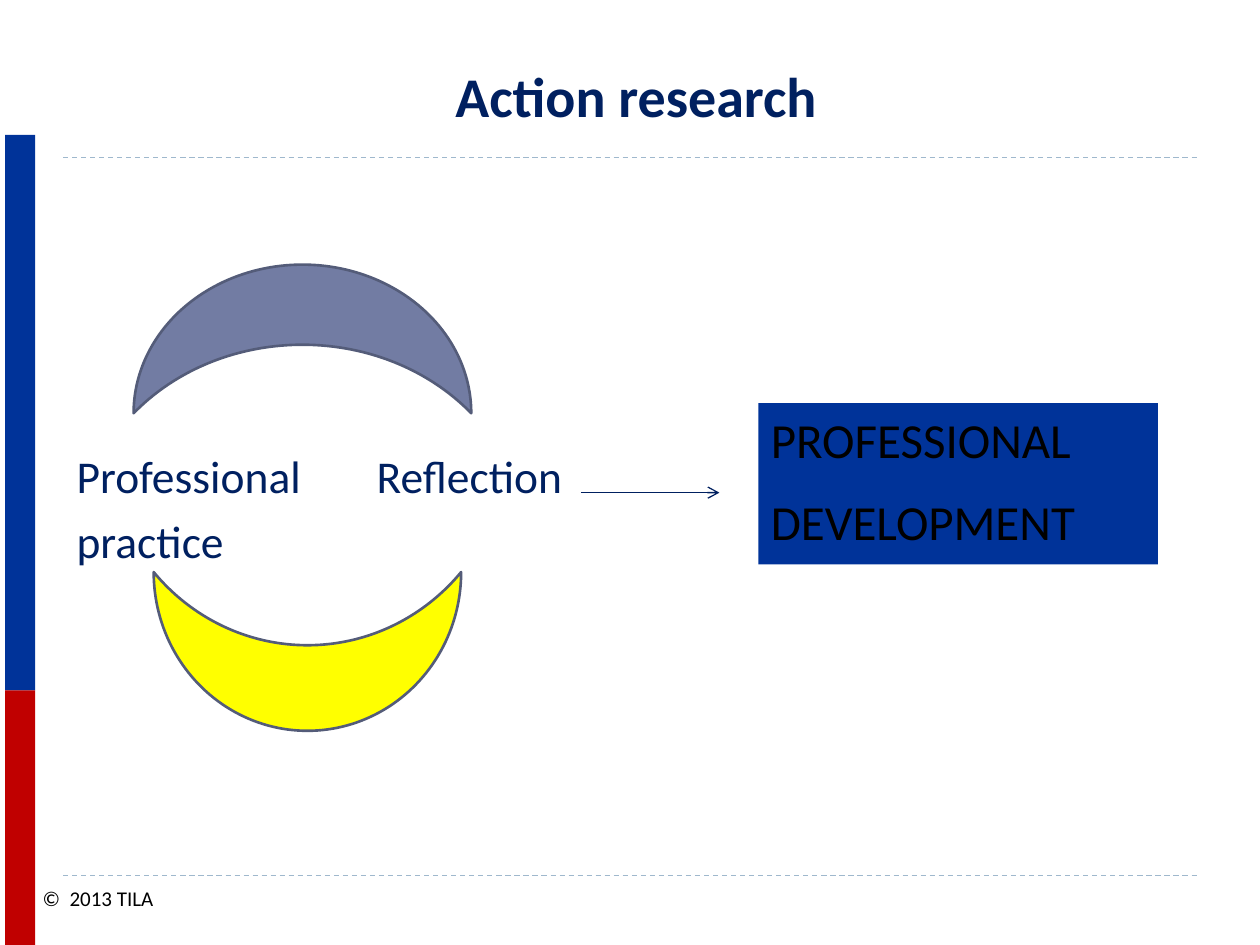
from collections import namedtuple

from lxml import etree
from pptx import Presentation
from pptx import util as u
from pptx.dml.color import RGBColor
from pptx.enum import dml, shapes, text
from pptx.oxml.ns import qn

# The page is a grid of 100 columns by 75 rows
COLUMNS, ROWS = 100, 75
CELL = u.Inches(0.1)
NAVY, BLUE, RED, YELLOW = "002060", "003399", "C00000", "FFFF00"
SLATE, SLATE_EDGE, RULE, BLACK = "727CA3", "545C79", "9FB8CD", "000000"

Box = namedtuple("Box", "left top width height")


def cells(*counts):
    return [round(count * CELL) for count in counts]


def inside(box, left, top, width, height):
    """A box given in cells from the corner of another box."""
    return Box(box.left + left, box.top + top, width, height)


def color(value):
    return RGBColor.from_string(value)


def add_block(page, kind, box, fill, edge=None):
    block = page.shapes.add_shape(kind, *cells(*box))
    block.shadow.inherit = False
    block.fill.solid()
    block.fill.fore_color.rgb = color(fill)
    if edge:
        block.line.color.rgb = color(edge)
        block.line.width = u.Pt(1.5)
    else:
        block.line.fill.background()
    return block


def add_line(page, start, end, stroke):
    line = page.shapes.add_connector(
        shapes.MSO_CONNECTOR.STRAIGHT, *cells(*start, *end))
    line.line.color.rgb = color(stroke)
    line.line.width = u.Pt(0.75)
    etree.SubElement(line._element.spPr, qn("a:effectLst"))
    return line


def write(frame, lines, size, ink, bold=False, align=text.PP_ALIGN.LEFT,
          anchor=text.MSO_ANCHOR.TOP, gap=0, hanging=0):
    frame.word_wrap = True
    frame.vertical_anchor = anchor
    for index, line in enumerate(lines):
        para = frame.paragraphs[0] if index == 0 else frame.add_paragraph()
        para.alignment = align
        if index:
            para.space_before = u.Pt(gap)
        if hanging:
            indent = cells(hanging)[0]
            properties = para._p.get_or_add_pPr()
            properties.set("marL", str(indent))
            properties.set("indent", str(-indent))
        span = para.add_run()
        span.text = line
        span.font.name = "Calibri"
        span.font.size = u.Pt(size)
        span.font.bold = bold
        span.font.color.rgb = color(ink)


def add_text(page, box, lines, size, ink, **style):
    holder = page.shapes.add_textbox(*cells(*box))
    write(holder.text_frame, lines, size, ink, **style)


def add_frame(page, box):
    # Dashed rules under the title and above the footer
    margin = 5
    for row in (69.5, 12.5):
        rule = add_line(page, (box.left + margin, box.top + row),
                        (box.left + box.width - margin, box.top + row), RULE)
        rule.line.dash_style = dml.MSO_LINE.DASH
    # Side bar in two colours, down to the foot of the page
    start, split = 10.7, 54.8
    for top, bottom, fill in ((start, split, BLUE), (split, box.height, RED)):
        add_block(page, shapes.MSO_SHAPE.RECTANGLE,
                  inside(box, 0.4, top, 2.4, bottom - top), fill)
    # Footer
    add_text(page, inside(box, 2.4, 69.8, 13, 3), ["©  2013 TILA"], 12, BLACK)


def add_title(page, box):
    add_text(page, box, ["Action research"], 32, NAVY, bold=True,
             align=text.PP_ALIGN.CENTER, anchor=text.MSO_ANCHOR.BOTTOM)


def add_cycle(page, box):
    # Two steps side by side
    add_text(page, inside(box, 0, 15, box.width, 11),
             ["Professional \t Reflection", "practice"], 26, NAVY,
             gap=6, hanging=3)
    # Crescents above and below, turned to face each other
    moons = (((13, -6.6, 11.8, 26.8), 90, SLATE),
             ((13, 19.4, 12.6, 24.4), 270, YELLOW))
    for place, turn, fill in moons:
        moon = add_block(page, shapes.MSO_SHAPE.MOON, inside(box, *place),
                         fill, SLATE_EDGE)
        moon.adjustments[0] = 0.539
        moon.rotation = turn


def add_outcome(page, box):
    # Arrow from the cycle to its result
    middle = box.top + 7.1
    arrow = add_line(page, (box.left, middle), (box.left + 11, middle), NAVY)
    etree.SubElement(arrow.line._get_or_add_ln(), qn("a:tailEnd"), type="arrow")
    # Result
    offset = 14.1
    result = add_block(page, shapes.MSO_SHAPE.RECTANGLE,
                       inside(box, offset, 0, box.width - offset, box.height),
                       BLUE)
    write(result.text_frame, ["PROFESSIONAL", "DEVELOPMENT"], 28, BLACK,
          gap=13.5)


def main():
    deck = Presentation()
    deck.slide_width, deck.slide_height = cells(COLUMNS, ROWS)
    page = deck.slides.add_slide(deck.slide_layouts[6])
    add_frame(page, Box(0, 0, COLUMNS, ROWS))
    add_title(page, Box(6.7, 3.6, 87.6, 7.1))
    add_cycle(page, Box(5.1, 20.1, 41, 38))
    add_outcome(page, Box(46.1, 32, 45.8, 12.8))
    deck.save("out.pptx")


if __name__ == "__main__":
    main()
